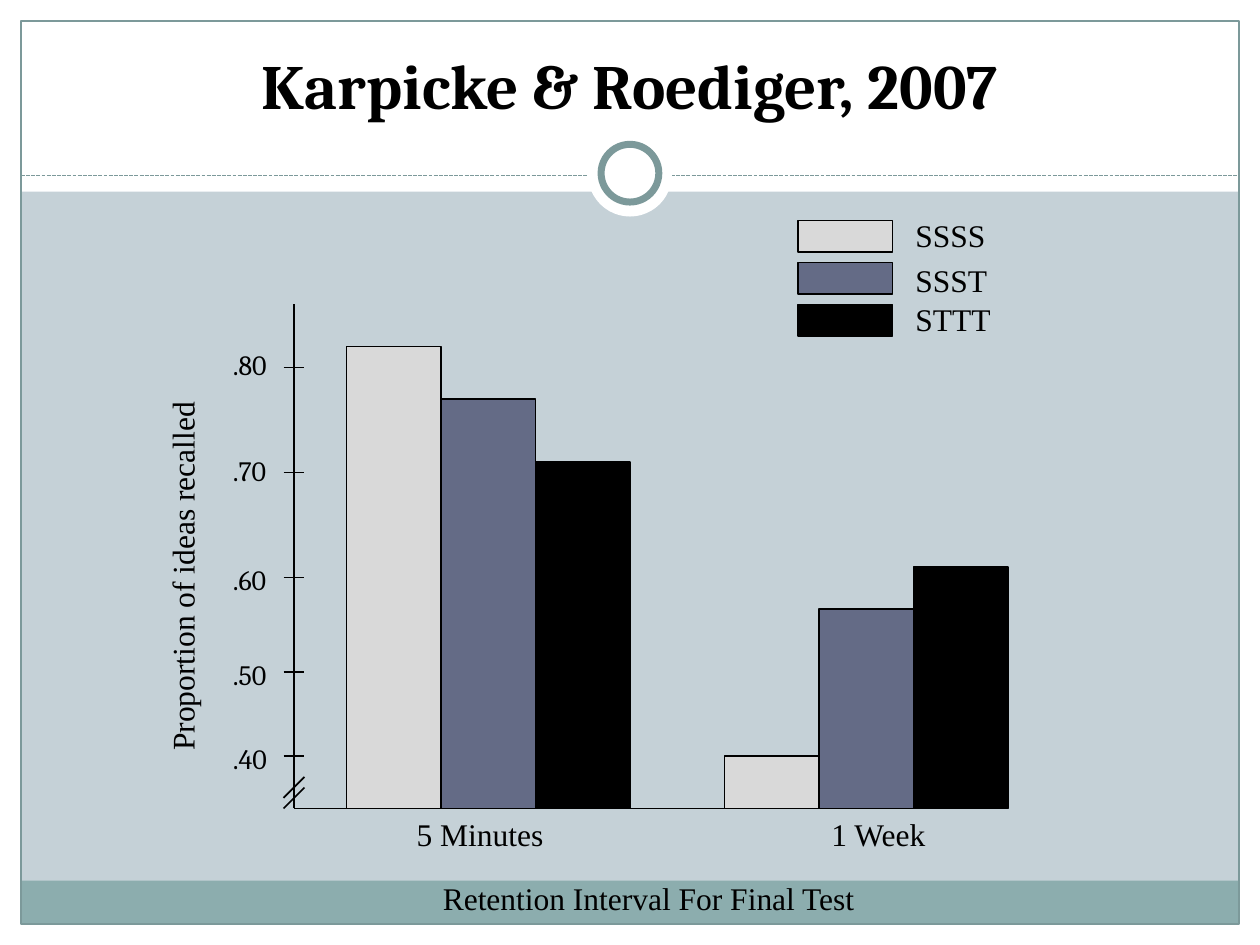
import pptx
import pptx.dml.color
import pptx.enum.dml
import pptx.enum.shapes
import pptx.enum.text
import pptx.oxml.ns
import pptx.slide
import pptx.util
from dataclasses import dataclass
from lxml import etree

EMU_PER_PX = 9525
WHITE, BLACK, TEAL, FOOTER, BACKGROUND = "FFFFFF", "000000", "7C999A", "8CADAE", "C5D1D7"
SERIF, HEADING = "Times New Roman", "Cambria"
RECTANGLE = pptx.enum.shapes.MSO_SHAPE.RECTANGLE
OVAL = pptx.enum.shapes.MSO_SHAPE.OVAL
PAGE_WIDTH, PAGE_HEIGHT, MARGIN = 960, 720, 16
AXIS_X, AXIS_TOP, BASELINE, AXIS_RIGHT = 224, 232, 616, 744
TICK_REACH, BAR_WIDTH = 8, 72


@dataclass
class Box:
    left: int
    top: int
    width: int
    height: int


@dataclass
class Series:
    name: str
    color: str
    swatch_top: int
    label_top: int
    label_width: int


@dataclass
class Group:
    label: str
    label_box: Box
    left: int
    tops: tuple[int, ...]


@dataclass
class Tick:
    label: str
    y: int
    label_top: int


SERIES = [
    Series("SSSS", "D9D9D9", 168, 160, 73),
    Series("SSST", "646B86", 200, 194, 74),
    Series("STTT", BLACK, 232, 224, 77),
]
GROUPS = [
    Group("5 Minutes", Box(308, 616, 116, 38), 264, (264, 304, 352)),
    Group("1 Week", Box(624, 616, 93, 38), 552, (576, 464, 432)),
]
TICKS = [
    Tick(".40", 576, 560),
    Tick(".50", 512, 496),
    Tick(".60", 440, 424),
    Tick(".70", 360, 341),
    Tick(".80", 280, 260),
]


def px(length: int) -> int:
    return pptx.util.Emu(length * EMU_PER_PX)


def rgb(color: str) -> pptx.dml.color.RGBColor:
    return pptx.dml.color.RGBColor.from_string(color)


def edges(box: Box) -> tuple[int, ...]:
    return px(box.left), px(box.top), px(box.width), px(box.height)


def add_block(page: pptx.slide.Slide, box: Box, fill: str | None, line: str | None = None,
              points: float = 1, kind=RECTANGLE) -> None:
    shape = page.shapes.add_shape(kind, *edges(box))
    shape.shadow.inherit = False
    if fill:
        shape.fill.solid()
        shape.fill.fore_color.rgb = rgb(fill)
    else:
        shape.fill.background()
    if line:
        shape.line.color.rgb = rgb(line)
        shape.line.width = pptx.util.Pt(points)
    else:
        shape.line.fill.background()


def add_line(page: pptx.slide.Slide, x1: int, y1: int, x2: int, y2: int,
             color: str = BLACK, points: float = 1, dash=None) -> None:
    line = page.shapes.add_connector(
        pptx.enum.shapes.MSO_CONNECTOR.STRAIGHT, px(x1), px(y1), px(x2), px(y2))
    line.line.color.rgb = rgb(color)
    line.line.width = pptx.util.Pt(points)
    if dash:
        line.line.dash_style = dash
    etree.SubElement(line._element.spPr, pptx.oxml.ns.qn("a:effectLst"))


def add_text(page: pptx.slide.Slide, text: str, box: Box, size: int = 18,
             font: str = SERIF, rotation: int = 0, title: bool = False) -> None:
    label = page.shapes.add_textbox(*edges(box))
    label.rotation = rotation
    frame = label.text_frame
    frame.word_wrap = title
    para = frame.paragraphs[0]
    para.text = text
    para.font.size = pptx.util.Pt(size)
    para.font.name = font
    para.font.bold = title
    para.font.color.rgb = rgb(BLACK)
    if title:
        frame.vertical_anchor = pptx.enum.text.MSO_ANCHOR.MIDDLE
        para.alignment = pptx.enum.text.PP_ALIGN.CENTER
    else:
        frame.auto_size = pptx.enum.text.MSO_AUTO_SIZE.SHAPE_TO_FIT_TEXT


def draw_frame(page: pptx.slide.Slide) -> None:
    inner_width = PAGE_WIDTH - 2 * MARGIN
    right, bottom = PAGE_WIDTH - MARGIN, PAGE_HEIGHT - MARGIN
    for band in (Box(0, bottom, PAGE_WIDTH, MARGIN), Box(0, 0, PAGE_WIDTH, 146),
                 Box(0, 0, MARGIN, PAGE_HEIGHT), Box(right, 0, MARGIN, PAGE_HEIGHT)):
        add_block(page, band, WHITE)
    add_block(page, Box(MARGIN, 671, inner_width, 33), FOOTER)
    add_block(page, Box(MARGIN, MARGIN, inner_width, PAGE_HEIGHT - 2 * MARGIN), None, TEAL, 0.75)
    add_line(page, MARGIN, 134, right, 134, TEAL, 0.75,
             pptx.enum.dml.MSO_LINE.SQUARE_DOT)
    add_block(page, Box(448, 101, 64, 64), WHITE, kind=OVAL)
    add_block(page, Box(458, 110, 44, 44), WHITE, TEAL, 4, OVAL)


def draw_graph(page: pptx.slide.Slide) -> None:
    add_line(page, AXIS_X, AXIS_TOP, AXIS_X, BASELINE)
    add_line(page, AXIS_X, BASELINE, AXIS_RIGHT, BASELINE)
    for group in GROUPS:
        for index, (series, top) in enumerate(zip(SERIES, group.tops)):
            bar = Box(group.left + index * BAR_WIDTH, top, BAR_WIDTH, BASELINE - top)
            add_block(page, bar, series.color, BLACK)
        add_text(page, group.label, group.label_box)
    tick_left, tick_right = AXIS_X - TICK_REACH, AXIS_X + TICK_REACH
    for tick in TICKS:
        add_line(page, tick_left, tick.y, tick_right, tick.y)
        add_text(page, tick.label, Box(168, tick.label_top, 51, 35), 16, HEADING)
    for y in (BASELINE, BASELINE - 8):
        add_line(page, tick_right, y - 16, tick_left, y)
    add_text(page, "Proportion of ideas recalled", Box(-4, 420, 285, 38), rotation=270)
    add_text(page, "Retention Interval For Final Test", Box(328, 665, 335, 38))


def draw_legend(page: pptx.slide.Slide) -> None:
    for series in SERIES:
        add_block(page, Box(608, series.swatch_top, BAR_WIDTH, 24), series.color, BLACK)
        add_text(page, series.name, Box(688, series.label_top, series.label_width, 38))


def main() -> None:
    deck = pptx.Presentation()
    deck.slide_width, deck.slide_height = px(PAGE_WIDTH), px(PAGE_HEIGHT)
    page = deck.slides.add_slide(deck.slide_layouts[6])
    page.background.fill.solid()
    page.background.fill.fore_color.rgb = rgb(BACKGROUND)
    draw_frame(page)
    draw_graph(page)
    draw_legend(page)
    add_text(page, "Karpicke & Roediger, 2007", Box(32, 24, 896, 80), 36, HEADING, title=True)
    deck.save("out.pptx")


if __name__ == "__main__":
    main()
